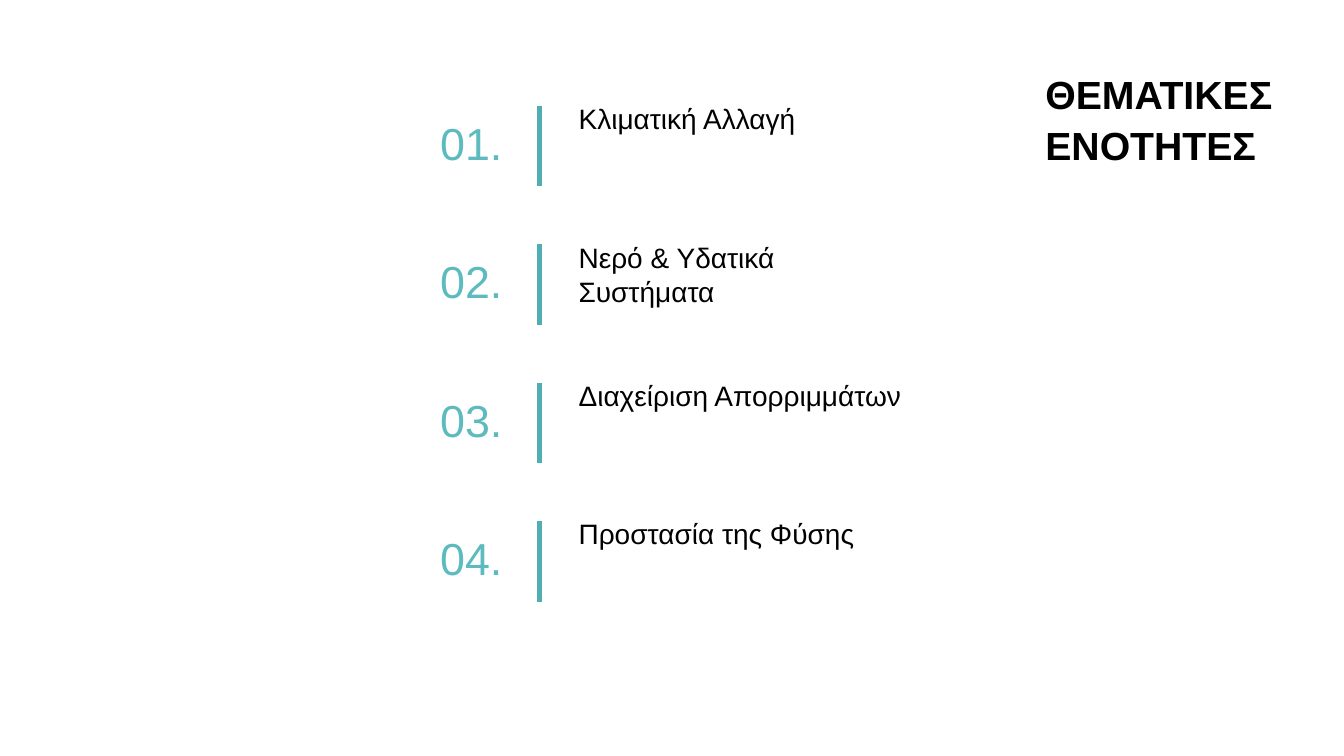
from pptx import Presentation
from pptx.dml.color import RGBColor
from pptx.enum.shapes import MSO_CONNECTOR
from pptx.enum.text import PP_ALIGN
from pptx.oxml.ns import qn
from pptx.util import Inches, Pt
from lxml.etree import SubElement

COLORS = {"bar": "4EAEB2", "number": "5DBBBF", "text": "000000"}
FONT = "Arial"
TOPICS = [
    # name, width and height of its box
    ("Κλιματική Αλλαγή", 3.24, 0.61),
    ("Νερό & Υδατικά Συστήματα", 3.24, 0.61),
    ("Διαχείριση Απορριμμάτων", 3.66, 0.45),
    ("Προστασία της Φύσης", 3.24, 0.61),
]
TOP, STEP = 0.95, 1.373


def add_text(slide, box, text, size, color, bold=False,
             align=PP_ALIGN.LEFT, spacing=1.0):
    frame = slide.shapes.add_textbox(*map(Inches, box)).text_frame
    frame.word_wrap = True
    line = frame.paragraphs[0]
    line.alignment = align
    line.line_spacing = spacing
    run = line.add_run()
    run.text = text
    run.font.name = FONT
    run.font.size = Pt(size)
    run.font.bold = bold
    run.font.color.rgb = RGBColor.from_string(COLORS[color])


def add_bar(slide, x, top, height):
    bar = slide.shapes.add_connector(
        MSO_CONNECTOR.STRAIGHT,
        Inches(x), Inches(top), Inches(x), Inches(top + height))
    bar.line.color.rgb = RGBColor.from_string(COLORS["bar"])
    bar.line.width = Pt(3)
    SubElement(bar._element.spPr, qn("a:effectLst"))


def add_topic(slide, box, number, name):
    """Place number, bar and name; the box is that of the name."""
    left, top, width, height = box
    add_bar(slide, left - 0.29, top + 0.1, 0.8)
    add_text(slide, (left - 1.48, top + 0.11, 1.03, 0.78), f"{number:02}.",
             32, "number", align=PP_ALIGN.CENTER, spacing=1.07)
    add_text(slide, (left, top, width, height), name, 20, "text",
             spacing=1.03)


def add_title(slide, box):
    add_text(slide, box, "ΘΕΜΑΤΙΚΕΣ ΕΝΟΤΗΤΕΣ", 28, "text", bold=True,
             spacing=1.07)


def main():
    deck = Presentation()
    deck.slide_width, deck.slide_height = Inches(13.33), Inches(7.5)
    slide = deck.slides.add_slide(deck.slide_layouts[6])
    for index, (name, width, height) in enumerate(TOPICS):
        add_topic(slide, (5.64, TOP + index * STEP, width, height),
                  index + 1, name)
    add_title(slide, (10.27, 0.62, 3.06, 1.11))
    deck.save("out.pptx")


if __name__ == "__main__":
    main()
